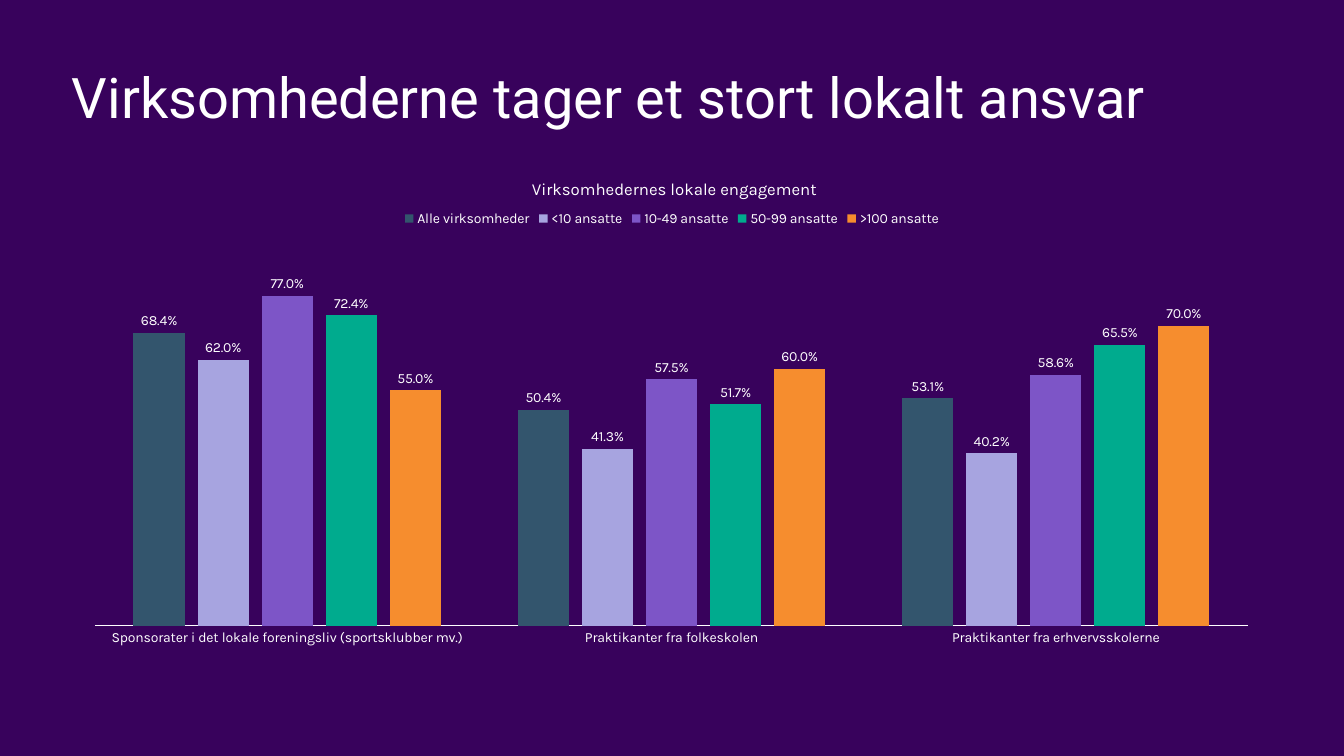
import pptx
import pptx.chart.data
import pptx.dml.color
import pptx.enum.chart
import pptx.enum.text
import pptx.oxml
import pptx.oxml.ns
import pptx.util

TITLE = "Virksomhederne tager et stort lokalt ansvar"
CHART_TITLE = "Virksomhedernes lokale engagement"
CATEGORIES = [
    "Sponsorater i det lokale foreningsliv (sportsklubber mv.)",
    "Praktikanter fra folkeskolen",
    "Praktikanter fra erhvervsskolerne",
]
SERIES = [
    ("Alle virksomheder", "slate", (0.684, 0.504, 0.531)),
    ("<10 ansatte", "lilac", (0.62, 0.413, 0.402)),
    ("10-49 ansatte", "violet", (0.77, 0.575, 0.586)),
    ("50-99 ansatte", "green", (0.724, 0.517, 0.655)),
    (">100 ansatte", "orange", (0.55, 0.6, 0.7)),
]
COLOURS = {
    "background": "38025C", "text": "FFFFFF", "slate": "33556D", "lilac": "A7A4E0",
    "violet": "7D55C7", "green": "00AB8E", "orange": "F68D2E",
}
PERCENT = "0.0%"

# Left, top, width, height in px
SLIDE_SIZE = (1344, 756)
TITLE_BOX = (72, 72, 1201, 83)
CHART_BOX = (72, 154, 1200, 502)
PLOT_BOX = (95, 240, 1153, 386)
CHART_TITLE_AT = (529, 175)
LEGEND_BOX = (400, 208, 544, 21)
EMU_PER_PX = 914400 / 100.8


def px(length):
    return pptx.util.Emu(round(length * EMU_PER_PX))


def colour(name):
    return pptx.dml.color.RGBColor.from_string(COLOURS[name])


def set_font(font, name, size):
    for key, value in {"name": name, "size": pptx.util.Pt(size), "bold": False}.items():
        setattr(font, key, value)
    font.color.rgb = colour("text")


def set_layout(element, index, box, inner=False):
    """Fix a chart part at a px box on the slide, as fractions of the chart."""
    for old in element.findall(pptx.oxml.ns.qn("c:layout")):
        element.remove(old)
    left, top, width, height = CHART_BOX
    offsets = (left, top, 0, 0)
    spans = (width, height, width, height)
    target = '<c:layoutTarget val="inner"/>' if inner else ""
    modes = '<c:xMode val="edge"/><c:yMode val="edge"/>'
    sizes = "".join(
        f'<c:{key} val="{(value - offset) / span:.4f}"/>'
        for key, value, offset, span in zip("xywh", box, offsets, spans)
    )
    element.insert(index, pptx.oxml.parse_xml(
        f'<c:layout {pptx.oxml.ns.nsdecls("c")}><c:manualLayout>'
        f"{target}{modes}{sizes}</c:manualLayout></c:layout>"
    ))


def add_title(page):
    title = page.shapes.title
    title.left, title.top, title.width, title.height = map(px, TITLE_BOX)
    frame = title.text_frame
    frame.text = TITLE
    frame_format = {
        "margin_left": 0, "margin_top": 0, "margin_right": 0, "margin_bottom": 0,
        "word_wrap": True, "vertical_anchor": pptx.enum.text.MSO_ANCHOR.TOP,
        "auto_size": pptx.enum.text.MSO_AUTO_SIZE.NONE,
    }
    for key, value in frame_format.items():
        setattr(frame, key, value)
    para = frame.paragraphs[0]
    para.alignment = pptx.enum.text.PP_ALIGN.LEFT
    para.line_spacing = 0.87
    set_font(para.runs[0].font, "Roboto", 40)


def add_engagement_chart(page):
    data = pptx.chart.data.CategoryChartData(number_format=PERCENT)
    data.categories = CATEGORIES
    for name, _, values in SERIES:
        data.add_series(name, values)
    chart = page.shapes.add_chart(
        pptx.enum.chart.XL_CHART_TYPE.COLUMN_CLUSTERED, *map(px, CHART_BOX), data
    ).chart
    set_font(chart.font, "Karla", 10)

    chart.has_title = True
    frame = chart.chart_title.text_frame
    frame.text = CHART_TITLE
    set_font(frame.paragraphs[0].runs[0].font, "Karla", 12)
    chart.has_legend = True
    chart.legend.position = pptx.enum.chart.XL_LEGEND_POSITION.TOP
    chart.legend.include_in_layout = False
    set_font(chart.legend.font, "Karla", 10)

    value_axis = chart.value_axis
    axis_format = {"minimum_scale": 0, "maximum_scale": 0.9,
                   "has_major_gridlines": False, "visible": False}
    for key, value in axis_format.items():
        setattr(value_axis, key, value)
    value_axis.tick_labels.number_format = PERCENT
    value_axis.tick_labels.number_format_is_linked = False

    category_axis = chart.category_axis
    category_axis.major_tick_mark = pptx.enum.chart.XL_TICK_MARK.NONE
    category_axis.format.line.color.rgb = colour("text")
    category_axis.format.line.width = pptx.util.Pt(0.75)
    set_font(category_axis.tick_labels.font, "Karla", 10)

    plot = chart.plots[0]
    label_format = {
        "show_value": True, "number_format": PERCENT, "number_format_is_linked": False,
        "position": pptx.enum.chart.XL_LABEL_POSITION.OUTSIDE_END,
    }
    for key, value in {"gap_width": 150, "overlap": -25, "vary_by_categories": False}.items():
        setattr(plot, key, value)
    for series, (_, fill, _) in zip(plot.series, SERIES):
        series.format.fill.solid()
        series.format.fill.fore_color.rgb = colour(fill)
        for key, value in label_format.items():
            setattr(series.data_labels, key, value)
        set_font(series.data_labels.font, "Karla", 10)

    chart_part = chart.element.find(pptx.oxml.ns.qn("c:chart"))
    set_layout(chart_part.find(pptx.oxml.ns.qn("c:plotArea")), 0, PLOT_BOX, inner=True)
    set_layout(chart_part.find(pptx.oxml.ns.qn("c:title")), 1, CHART_TITLE_AT)
    set_layout(chart_part.find(pptx.oxml.ns.qn("c:legend")), 1, LEGEND_BOX)


def main():
    deck = pptx.Presentation()
    deck.slide_width, deck.slide_height = map(px, SLIDE_SIZE)
    page = deck.slides.add_slide(deck.slide_layouts.get_by_name("Title Only"))
    page.background.fill.solid()
    page.background.fill.fore_color.rgb = colour("background")
    add_title(page)
    add_engagement_chart(page)
    deck.save("out.pptx")


if __name__ == "__main__":
    main()
